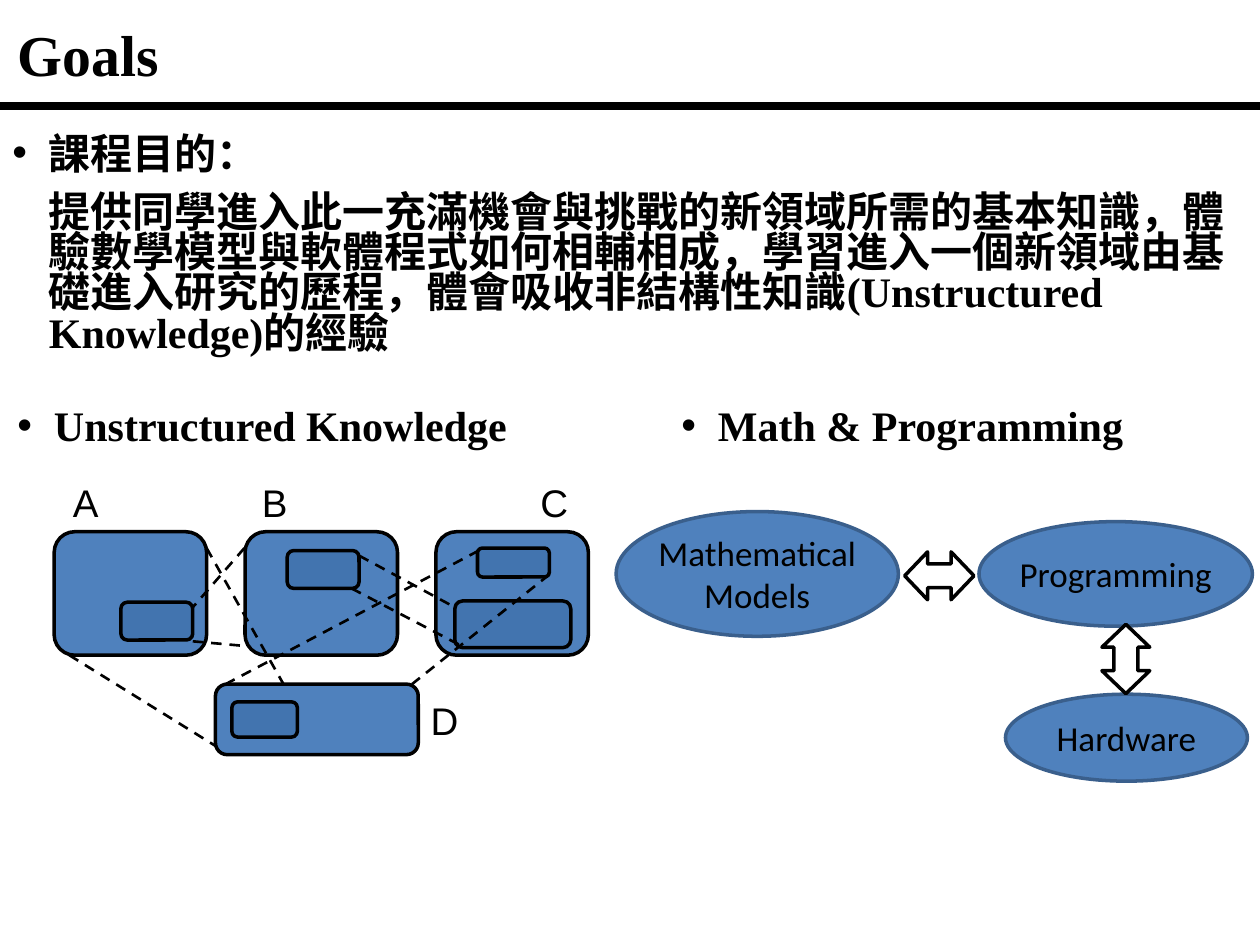
from lxml import etree
from pptx import Presentation
from pptx import util as u
from pptx.dml.color import RGBColor
from pptx.enum import dml, shapes, text
from pptx.oxml.ns import qn

COLORS = {"ink": "000000", "paper": "FFFFFF", "blue": "4F81BD",
          "inner": "4274AF", "edge": "3A5F8C"}
SERIF, SANS, BODY = "Times New Roman", "Arial", "Calibri"
PRESET = shapes.MSO_SHAPE


def rgb(name):
    return RGBColor.from_string(COLORS[name])


def inches(*values):
    return [u.Inches(v) for v in values]


def format_text(p, size, font, bold=False):
    for r in p.runs:
        r.font.size, r.font.name, r.font.bold = u.Pt(size), font, bold
        r.font.color.rgb = rgb("ink")


def add_text(s, box, lines, size, font, bold=False, wrap=True):
    tf = s.add_textbox(*inches(*box)).text_frame
    tf.word_wrap = wrap
    tf.text = "\n".join(lines)
    for p in tf.paragraphs:
        format_text(p, size, font, bold)
    return tf


def indent(p, bullet=True):
    """Hang a paragraph at the common indent, with or without its bullet."""
    p.line_spacing = 0.8
    pPr = p._p.get_or_add_pPr()
    pPr.set("marL", str(u.Inches(0.29)))
    pPr.set("indent", str(u.Inches(-0.29 if bullet else 0)))
    if bullet:
        etree.SubElement(pPr, qn("a:buFont")).set("typeface", SANS)
        etree.SubElement(pPr, qn("a:buChar")).set("char", "•")
    else:
        etree.SubElement(pPr, qn("a:buNone"))


def add_line(s, start, end, width, dash=None):
    line = s.add_connector(shapes.MSO_CONNECTOR.STRAIGHT, *inches(*start, *end))
    line.line.color.rgb = rgb("ink")
    line.line.width = u.Pt(width)
    if dash:
        line.line.dash_style = dash
    etree.SubElement(line._element.spPr, qn("a:effectLst"))


def add_shape(s, preset, box, fill, edge="ink"):
    sp = s.add_shape(preset, *inches(*box))
    sp.shadow.inherit = False
    sp.fill.solid()
    sp.fill.fore_color.rgb = rgb(fill)
    sp.line.color.rgb = rgb(edge)
    sp.line.width = u.Pt(2)
    return sp


def add_header(s, box, title):
    x, y, w, h = box
    tf = add_text(s, (x + 0.04, y + 0.13, 9, 0.69), [title], 33, SERIF, True)
    tf.vertical_anchor = text.MSO_ANCHOR.MIDDLE
    tf.paragraphs[0].line_spacing = 0.8
    add_line(s, (x, y + h), (x + w, y + h), 4.5)


def add_purpose(s, box, heading, body):
    tf = add_text(s, box, [heading, body], 24, SERIF, True)
    first, second = tf.paragraphs
    indent(first)
    indent(second, bullet=False)
    second.space_before = u.Pt(10)


def add_heading(s, box, heading):
    p = add_text(s, box, [heading], 24, SERIF, True).paragraphs[0]
    indent(p)
    p.space_after = u.Pt(15)


def add_knowledge(s, box):
    """Blocks A to D with their inner parts and the dashed links between them."""
    x, y, w, h = box
    g = s.add_group_shape().shapes
    block_w, block_h = 1.21, 0.98
    pitch = (w - block_w) / 2
    blocks = [(i * pitch, 0.47, block_w, block_h) for i in range(3)]
    blocks.append((1.28, h - 0.56, 1.61, 0.56))
    parts = [(0.53, 1.03, 0.57, 0.3), (1.85, 0.62, 0.57, 0.3),
             (3.18, 1.02, 0.92, 0.37), (3.36, 0.6, 0.57, 0.23),
             (1.41, 1.82, 0.52, 0.28)]
    for fill, group in (("blue", blocks), ("inner", parts)):
        for dx, dy, pw, ph in group:
            add_shape(g, PRESET.ROUNDED_RECTANGLE, (x + dx, y + dy, pw, ph), fill)

    links = [(1.21, 0.6, 1.82, 1.68), (0.12, 1.45, 1.28, 2.17),
             (2.42, 0.66, 3.18, 1.07), (2.36, 0.92, 3.22, 1.37),
             (3.37, 0.62, 1.36, 1.68), (3.93, 0.81, 2.84, 1.68),
             (1.51, 0.6, 1.1, 1.07), (1.1, 1.34, 1.55, 1.38)]
    for x1, y1, x2, y2 in links:
        add_line(g, (x + x1, y + y1), (x + x2, y + y2), 1.5, dml.MSO_LINE.DASH)

    labels = {"A": (0.05, 0), "B": (1.55, 0), "C": (3.76, 0), "D": (2.89, 1.73)}
    for label, (dx, dy) in labels.items():
        add_text(g, (x + dx, y + dy, 0.34, 0.38), [label], 22, SANS, wrap=False)


def add_models(s, box):
    """Three ellipses joined by double arrows."""
    x, y, w, h = box
    g = s.add_group_shape().shapes
    ellipses = [("Mathematical\nModels", 0, 0, 2.24, 0.99),
                ("Programming", w - 2.17, 0.08, 2.17, 0.83),
                ("Hardware", 3.09, h - 0.69, 1.92, 0.69)]
    for label, dx, dy, ew, eh in ellipses:
        sp = add_shape(g, PRESET.OVAL, (x + dx, y + dy, ew, eh), "blue", "edge")
        tf = sp.text_frame
        tf.margin_left = tf.margin_right = tf.margin_top = tf.margin_bottom = 0
        tf.vertical_anchor = text.MSO_ANCHOR.MIDDLE
        tf.text = label
        for p in tf.paragraphs:
            p.alignment = text.PP_ALIGN.CENTER
            format_text(p, 20, BODY)
    for dx, dy, angle in ((2.29, 0.32, 0), (3.77, 0.98, 90)):
        sp = add_shape(g, PRESET.LEFT_RIGHT_ARROW, (x + dx, y + dy, 0.55, 0.38), "paper")
        sp.adjustments[0], sp.adjustments[1] = 0.5, 0.478
        sp.rotation = angle


def main():
    prs = Presentation()
    prs.slide_width, prs.slide_height = inches(10, 7.5)
    s = prs.slides.add_slide(prs.slide_layouts[6]).shapes
    add_header(s, (0, 0, 10, 0.84), "Goals")
    add_purpose(s, (0, 1.04, 10, 1.86), "課程目的：",
                "提供同學進入此一充滿機會與挑戰的新領域所需的基本知識，"
                "體驗數學模型與軟體程式如何相輔相成，"
                "學習進入一個新領域由基礎進入研究的歷程，"
                "體會吸收非結構性知識(Unstructured Knowledge)的經驗")
    add_heading(s, (0.04, 3.2, 4.17, 0.42), "Unstructured Knowledge")
    add_knowledge(s, (0.43, 3.75, 4.24, 2.24))
    add_heading(s, (5.31, 3.2, 3.74, 0.42), "Math & Programming")
    add_models(s, (4.89, 4.06, 5.05, 2.14))
    prs.save("out.pptx")


if __name__ == "__main__":
    main()
